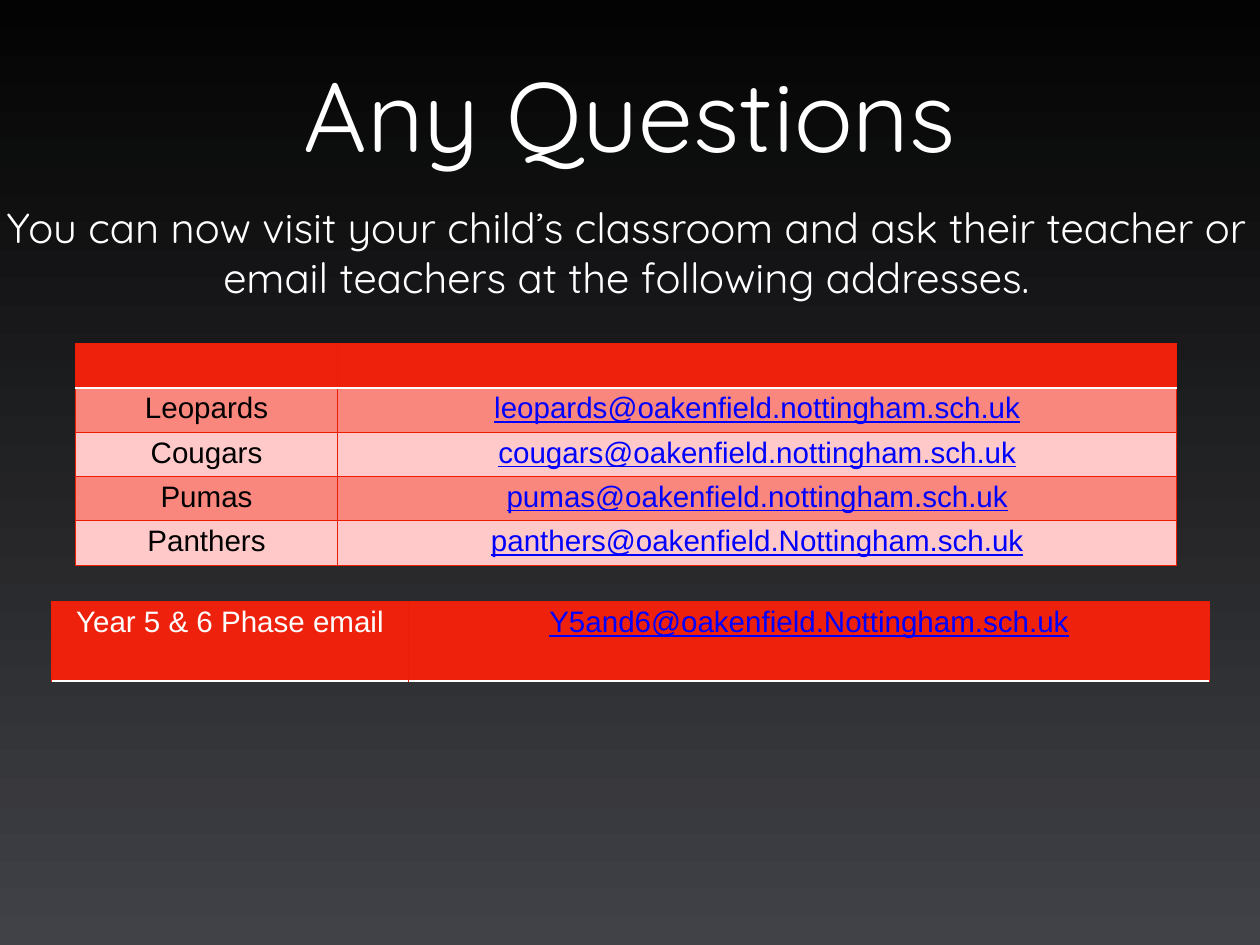
import pptx
import pptx.dml.color
import pptx.enum.text
import pptx.oxml
import pptx.oxml.ns
import pptx.util
from pptx.util import Cm

RED, BORDER, WHITE = "EE220C", "EE1D06", "FFFFFF"
DARK_BAND, LIGHT_BAND = "F9877D", "FFC9C9"
CENTER = pptx.enum.text.PP_ALIGN.CENTER


def rgb(value):
    return pptx.dml.color.RGBColor.from_string(value)


def add_email_table(rows, left, top, widths, row_height, has_header):
    """Add a two-column table; rows hold (fill, label, address)."""
    table = slide.shapes.add_table(
        len(rows), 2, Cm(left), Cm(top), Cm(sum(widths)), Cm(row_height * len(rows))
    ).table
    table.first_row = table.horz_banding = False
    for column, width in zip(table.columns, widths):
        column.width = Cm(width)
    for r, (fill, *texts) in enumerate(rows):
        for c, text in enumerate(texts):
            cell = table.cell(r, c)
            cell.fill.solid()
            cell.fill.fore_color.rgb = rgb(fill)
            paragraph = cell.text_frame.paragraphs[0]
            paragraph.alignment = CENTER
            if text:
                paragraph.text = text
                paragraph.font.size = pptx.util.Pt(24)
                paragraph.font.name = "Arial"
                paragraph.font.underline = c == 1
                label_color = WHITE if fill == RED else "000000"
                paragraph.font.color.rgb = rgb("0000FF" if c == 1 else label_color)
            # Red borders, with a white rule under the red row
            for i, side in enumerate("LRTB"):
                white = (side == "B" and r == 0) or (side == "T" and r == 1 and has_header)
                color, points = (WHITE, 2) if white else (BORDER, 0.75)
                line = pptx.oxml.parse_xml(
                    f'<a:ln{side} {pptx.oxml.ns.nsdecls("a")} w="{pptx.util.Pt(points)}">'
                    f'<a:solidFill><a:srgbClr val="{color}"/></a:solidFill></a:ln{side}>'
                )
                cell._tc.get_or_add_tcPr().insert(i, line)


presentation = pptx.Presentation()
presentation.slide_width, presentation.slide_height = Cm(36.12), Cm(27.1)
slide = presentation.slides.add_slide(presentation.slide_layouts[5])

# Background gradient, dark at the top
background = slide.background.fill
background.gradient()
background.gradient_angle = 270
for stop, color in zip(background.gradient_stops, ("030303", "414247")):
    stop.color.rgb = rgb(color)

# Title and invitation
title = slide.shapes.title
title.left, title.top, title.width, title.height = Cm(3.53), Cm(1.09), Cm(29.06), Cm(4.01)
invitation = slide.shapes.add_textbox(Cm(0), Cm(5.61), Cm(35.92), Cm(3.2))
for box, text, size, anchor in (
    (title, "Any Questions", 80, pptx.enum.text.MSO_ANCHOR.BOTTOM),
    (invitation,
     "You can now visit your child’s classroom and ask their teacher or "
     "email teachers at the following addresses.",
     34, pptx.enum.text.MSO_ANCHOR.MIDDLE),
):
    frame = box.text_frame
    frame.text = text
    frame.word_wrap = True
    frame.auto_size = pptx.enum.text.MSO_AUTO_SIZE.NONE
    frame.vertical_anchor = anchor
    frame.margin_left = frame.margin_right = Cm(0.15)
    frame.margin_top = frame.margin_bottom = Cm(0.15)
    paragraph = frame.paragraphs[0]
    paragraph.alignment = CENTER
    paragraph.font.size = pptx.util.Pt(size)
    paragraph.font.name = "Quicksand"
    paragraph.font.color.rgb = rgb(WHITE)

# Phase email
add_email_table(
    [(RED, "Year 5 & 6 Phase email", "Y5and6@oakenfield.Nottingham.sch.uk")],
    1.47, 17.25, (10.24, 22.96), 2.29, False,
)

# Class emails
class_rows = [
    (RED, "", ""),
    (DARK_BAND, "Leopards", "leopards@oakenfield.nottingham.sch.uk"),
    (LIGHT_BAND, "Cougars", "cougars@oakenfield.nottingham.sch.uk"),
    (DARK_BAND, "Pumas", "pumas@oakenfield.nottingham.sch.uk"),
    (LIGHT_BAND, "Panthers", "panthers@oakenfield.Nottingham.sch.uk"),
]
add_email_table(class_rows, 2.16, 9.85, (7.52, 24.05), 1.27, True)

presentation.save("out.pptx")
